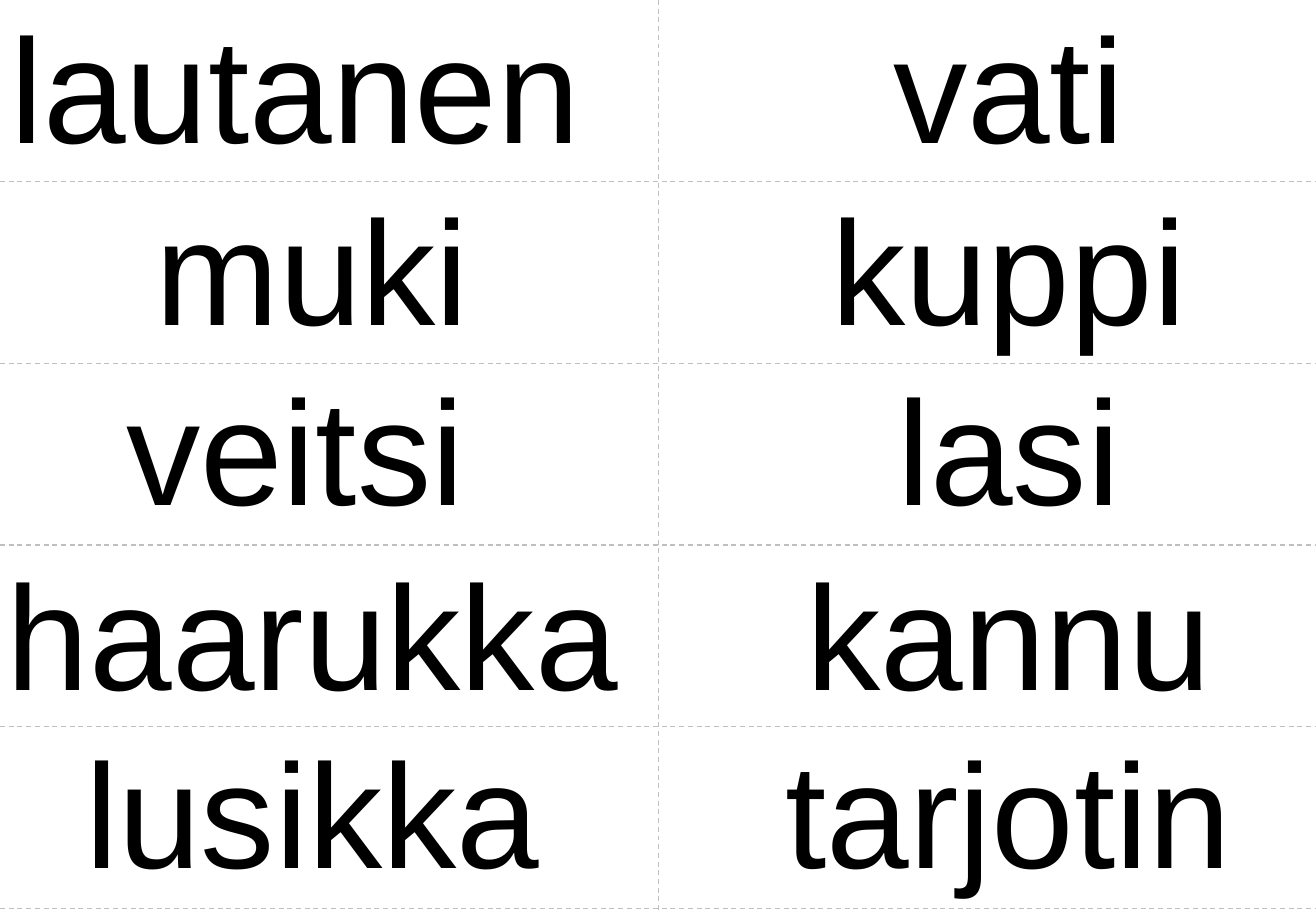
from dataclasses import dataclass

from lxml import etree
from pptx import Presentation
from pptx.dml.color import RGBColor
from pptx.enum.dml import MSO_LINE
from pptx.enum.shapes import MSO_CONNECTOR
from pptx.enum.text import MSO_AUTO_SIZE, PP_ALIGN
from pptx.oxml.ns import qn
from pptx.util import Inches, Pt

STRAIGHT = MSO_CONNECTOR.STRAIGHT
DASH = MSO_LINE.DASH
CENTER = PP_ALIGN.CENTER
GROW = MSO_AUTO_SIZE.SHAPE_TO_FIT_TEXT


@dataclass(frozen=True)
class Theme:
    font: str = "Arial"
    word_size: float = 88
    ink: RGBColor = RGBColor(0x00, 0x00, 0x00)
    cut_line: RGBColor = RGBColor(0xBF, 0xBF, 0xBF)
    cut_width: float = 0.75


THEME = Theme()
SLIDE_W, SLIDE_H = 10.83, 7.5
COLUMN_W, ROW_H = 5.42, 1.496
WORD_H, INSET = 1.48, 0.05
WORD_TOPS = [-0.09, 1.41, 2.89, 4.41, 5.88]

# word, centre within its column, width
LEFT_WORDS = [
    ("lautanen", 2.43, 4.8),
    ("muki", 2.57, 2.69),
    ("veitsi", 2.43, 2.9),
    ("haarukka", 2.57, 5.14),
    ("lusikka", 2.57, 3.85),
]
RIGHT_WORDS = [
    ("vati", 2.88, 2.02),
    ("kuppi", 2.88, 3.04),
    ("lasi", 2.88, 1.95),
    ("kannu", 2.88, 3.44),
    ("tarjotin", 2.88, 3.78),
]


def add_text(slide, text, x, y, w, h, *, size, color, align=CENTER):
    s = slide.shapes.add_textbox(Inches(x), Inches(y), Inches(w), Inches(h))
    tf = s.text_frame
    tf.word_wrap = False
    tf.auto_size = GROW
    tf.margin_left = tf.margin_right = Inches(INSET)
    tf.margin_top = tf.margin_bottom = Inches(INSET)
    p = tf.paragraphs[0]
    p.alignment = align
    r = p.add_run()
    r.text = text
    r.font.name = THEME.font
    r.font.size = Pt(size)
    r.font.color.rgb = color


def add_cut_line(slide, x1, y1, x2, y2):
    s = slide.shapes.add_connector(
        STRAIGHT, Inches(x1), Inches(y1), Inches(x2), Inches(y2))
    s.line.color.rgb = THEME.cut_line
    s.line.width = Pt(THEME.cut_width)
    s.line.dash_style = DASH
    etree.SubElement(s._element.spPr, qn("a:effectLst"))


def add_word_column(slide, x, y, words):
    for top, (word, centre, width) in zip(WORD_TOPS, words):
        add_text(slide, word, x + centre - width / 2, y + top, width, WORD_H,
                 size=THEME.word_size, color=THEME.ink)


def add_cut_grid(slide, x, y, w, h, rows):
    add_cut_line(slide, x + COLUMN_W, y, x + COLUMN_W, y + h)
    for row in range(1, rows + 1):
        line_y = y + row * ROW_H
        add_cut_line(slide, x, line_y, x + w, line_y)


def main():
    prs = Presentation()
    prs.slide_width, prs.slide_height = Inches(SLIDE_W), Inches(SLIDE_H)
    slide = prs.slides.add_slide(prs.slide_layouts[6])
    add_word_column(slide, 0, 0, LEFT_WORDS)
    add_word_column(slide, COLUMN_W, 0, RIGHT_WORDS)
    add_cut_grid(slide, 0, 0, SLIDE_W, SLIDE_H, len(WORD_TOPS))
    prs.save("out.pptx")


if __name__ == "__main__":
    main()
